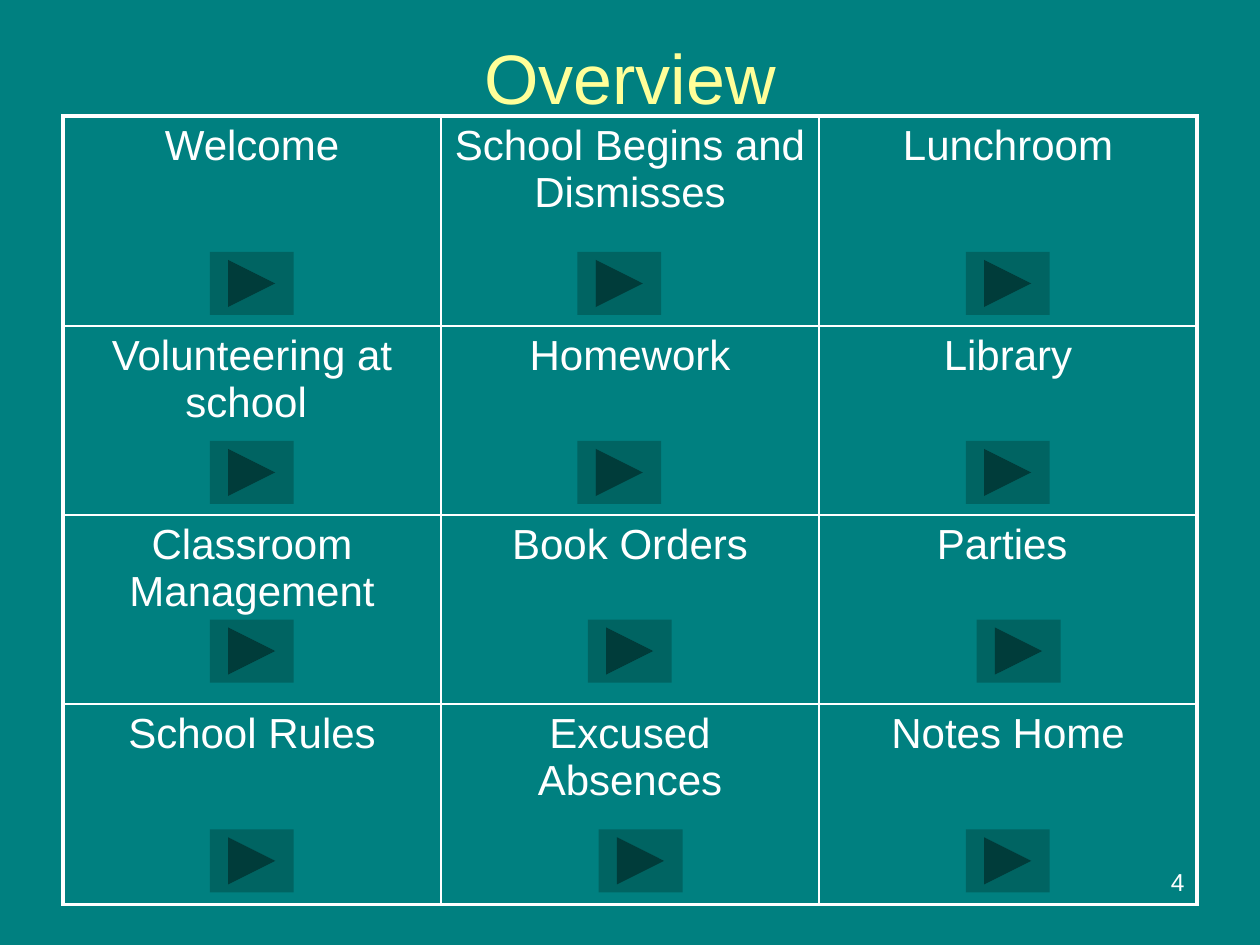
from dataclasses import dataclass

import pptx
import pptx.dml.color
import pptx.enum.shapes
import pptx.enum.text
import pptx.oxml
import pptx.oxml.ns
import pptx.util
from pptx.util import Cm

Align = pptx.enum.text.PP_ALIGN


@dataclass(frozen=True)
class Theme:
    font: str = "Arial"
    background: str = "008080"
    title: str = "FFFF99"
    text: str = "FFFFFF"
    button: str = "006462"
    title_size: int = 40
    cell_size: int = 24
    number_size: int = 14
    outer_border: float = 2.25
    inner_border: float = 1


THEME = Theme()

TOPICS = [
    ["Welcome", "School Begins and Dismisses", "Lunchroom"],
    ["Volunteering at school ", "Homework", "Library"],
    ["Classroom Management", "Book Orders", "Parties "],
    ["School Rules", "Excused Absences", "Notes Home"],
]
TABLE_LEFT, TABLE_TOP = 1.27, 2.34
COLUMN_WIDTH = 7.62
ROW_HEIGHTS = [4.23, 3.81, 3.81, 4.04]

BUTTON_WIDTH, BUTTON_HEIGHT = 1.69, 1.27
# Top of each row of buttons, then the left edge of each button in it
BUTTON_ROWS = [
    (5.08, [4.23, 11.64, 19.47]),
    (8.89, [4.23, 11.64, 19.47]),
    (12.49, [4.23, 11.85, 19.69]),
    (16.72, [4.23, 12.07, 19.47]),
]


def rgb(color):
    return pptx.dml.color.RGBColor.from_string(color)


def write(text_frame, text, size, color, alignment):
    text_frame.text = text
    text_frame.word_wrap = True
    paragraph = text_frame.paragraphs[0]
    paragraph.alignment = alignment
    font = paragraph.runs[0].font
    font.name = THEME.font
    font.size = pptx.util.Pt(size)
    font.color.rgb = rgb(color)


def add_title(slide, text):
    title = slide.shapes.title
    title.left, title.top = Cm(1.27), Cm(0.76)
    title.width, title.height = Cm(22.86), Cm(1.57)
    write(title.text_frame, text, THEME.title_size, THEME.title, Align.CENTER)
    title.text_frame.auto_size = pptx.enum.text.MSO_AUTO_SIZE.NONE
    title.text_frame.vertical_anchor = pptx.enum.text.MSO_ANCHOR.MIDDLE


def add_slide_number(slide, number):
    box = slide.shapes.add_textbox(Cm(18.21), Cm(17.35), Cm(5.92), Cm(1.32))
    write(box.text_frame, number, THEME.number_size, THEME.text, Align.RIGHT)


def set_border(cell, side, width):
    """Draw one side (L, R, T or B) of a cell; call in that order."""
    namespace = pptx.oxml.ns.nsdecls("a")
    cell._tc.get_or_add_tcPr().append(pptx.oxml.parse_xml(
        f'<a:ln{side} {namespace} w="{pptx.util.Pt(width)}"><a:solidFill>'
        f'<a:srgbClr val="{THEME.text}"/></a:solidFill></a:ln{side}>'))


def add_topic_table(slide):
    row_count, column_count = len(TOPICS), len(TOPICS[0])
    table = slide.shapes.add_table(
        row_count, column_count, Cm(TABLE_LEFT), Cm(TABLE_TOP),
        Cm(COLUMN_WIDTH * column_count), Cm(sum(ROW_HEIGHTS))).table
    table.first_row = table.horz_banding = False
    for column in table.columns:
        column.width = Cm(COLUMN_WIDTH)
    for row, height in zip(table.rows, ROW_HEIGHTS):
        row.height = Cm(height)

    for row_index, topics in enumerate(TOPICS):
        for column_index, topic in enumerate(topics):
            cell = table.cell(row_index, column_index)
            write(cell.text_frame, topic, THEME.cell_size, THEME.text, Align.CENTER)
            on_edge = {
                "L": column_index == 0,
                "R": column_index == column_count - 1,
                "T": row_index == 0,
                "B": row_index == row_count - 1,
            }
            for side, is_outer in on_edge.items():
                set_border(cell, side,
                           THEME.outer_border if is_outer else THEME.inner_border)
            cell.fill.background()


def add_forward_button(slide, left, top):
    button = slide.shapes.add_shape(
        pptx.enum.shapes.MSO_SHAPE.ACTION_BUTTON_FORWARD_OR_NEXT,
        Cm(left), Cm(top), Cm(BUTTON_WIDTH), Cm(BUTTON_HEIGHT))
    button.shadow.inherit = False
    button.fill.solid()
    button.fill.fore_color.rgb = rgb(THEME.button)
    button.line.fill.background()


def main():
    presentation = pptx.Presentation()
    presentation.slide_width, presentation.slide_height = Cm(25.4), Cm(19.05)
    slide = presentation.slides.add_slide(
        presentation.slide_layouts.get_by_name("Title Only"))
    slide.background.fill.solid()
    slide.background.fill.fore_color.rgb = rgb(THEME.background)

    add_slide_number(slide, "4")
    add_title(slide, "Overview")
    add_topic_table(slide)
    for top, lefts in BUTTON_ROWS:
        for left in lefts:
            add_forward_button(slide, left, top)
    presentation.save("out.pptx")


if __name__ == "__main__":
    main()
